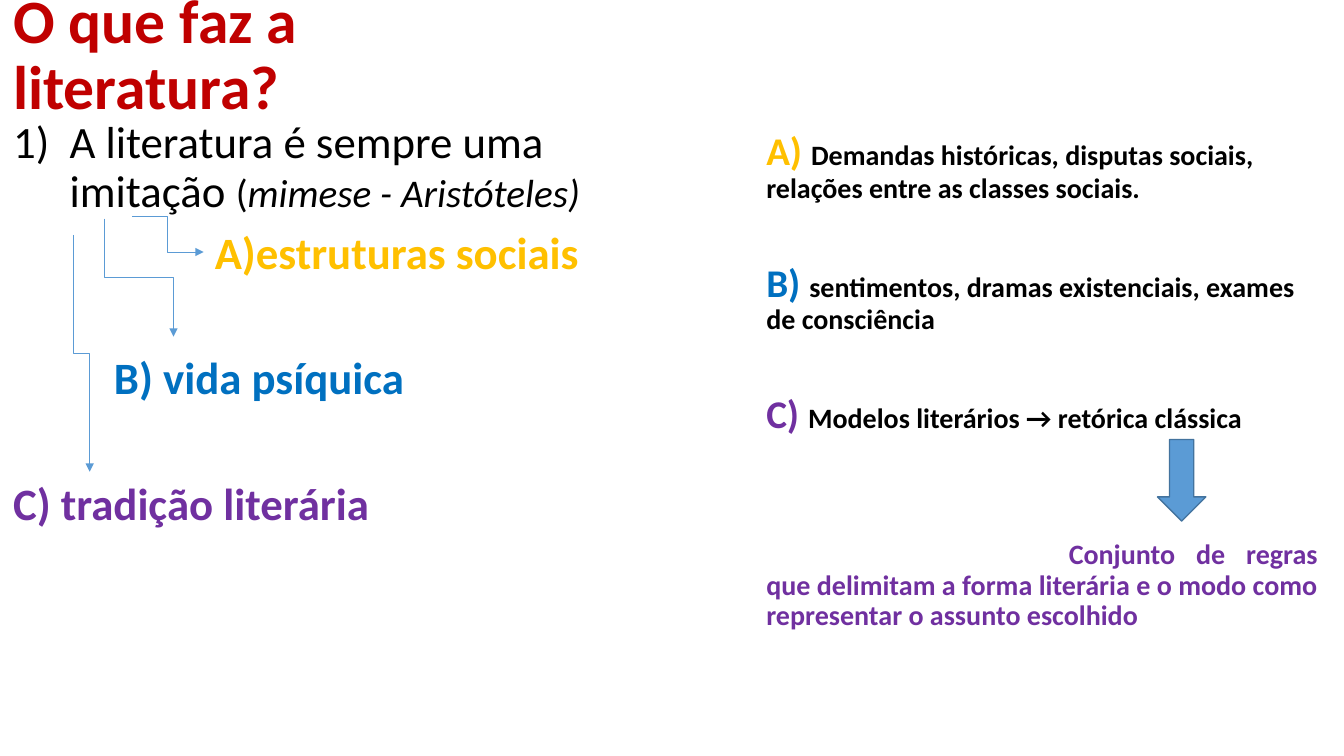
from pptx import Presentation
from pptx.dml.color import RGBColor
from pptx.enum.shapes import MSO_CONNECTOR, MSO_SHAPE
from pptx.enum.text import MSO_ANCHOR, MSO_AUTO_SIZE, PP_ALIGN
from pptx.oxml.ns import qn
from pptx.util import Inches, Pt
from lxml.etree import SubElement

RED = RGBColor(0xC0, 0x00, 0x00)
BLACK = RGBColor(0x00, 0x00, 0x00)
GOLD = RGBColor(0xFF, 0xC0, 0x00)
BLUE = RGBColor(0x00, 0x70, 0xC0)
PURPLE = RGBColor(0x70, 0x30, 0xA0)
SKY = RGBColor(0x5B, 0x9B, 0xD5)
EDGE = RGBColor(0x43, 0x73, 0x9E)

TAB = Inches(1)
HANG = Inches(0.56)
GAP = 10


def place(box, left, top, width, height):
    box.left, box.top = Inches(left), Inches(top)
    box.width, box.height = Inches(width), Inches(height)
    box.text_frame.word_wrap = True
    box.text_frame.auto_size = MSO_AUTO_SIZE.NONE


def write(par, runs, before=GAP, left=0, first=0, number=False):
    """Fill a paragraph with (text, size, colour, bold, italic) runs."""
    par.line_spacing = 0.9
    par.space_before = Pt(before)
    par.alignment = PP_ALIGN.LEFT
    props = par._p.get_or_add_pPr()
    props.set("marL", str(left))
    props.set("indent", str(first))
    if number:
        SubElement(props, qn("a:buFont"), typeface="+mj-lt")
        SubElement(props, qn("a:buAutoNum"), type="arabicParenR")
    else:
        SubElement(props, qn("a:buNone"))
    for text, size, color, bold, italic in runs:
        run = par.add_run()
        run.text = text
        font = run.font
        font.name, font.size = "Calibri", Pt(size)
        font.bold, font.italic = bold, italic
        font.color.rgb = color


deck = Presentation()
deck.slide_width, deck.slide_height = Inches(13.33), Inches(7.5)
slide = deck.slides.add_slide(deck.slide_layouts[3])
title, topics, notes = slide.placeholders

# Title
place(title, 0.03, 0, 5.68, 1.12)
title.text_frame.vertical_anchor = MSO_ANCHOR.MIDDLE
write(title.text_frame.paragraphs[0],
      [("O que faz a literatura?", 44, RED, True, False)], before=0)

# Left column: the thesis and its three objects
place(topics, 0.03, 1.14, 6.09, 6.2)
frame = topics.text_frame
write(frame.paragraphs[0], [
    ("A literatura é sempre uma imitação ", 32, BLACK, False, False),
    ("(", 28, BLACK, False, False),
    ("mimese - Aristóteles)", 28, BLACK, False, True),
], left=HANG, first=-HANG, number=True)
for text, color, tabs, before in [
    ("A)estruturas sociais", GOLD, 2, GAP),
    ("B) vida psíquica", BLUE, 1, 55),
    ("C) tradição literária", PURPLE, 0, 55),
]:
    write(frame.add_paragraph(), [(text, 32, color, True, False)],
          before, left=tabs * TAB)

# Right column: what each object covers
place(notes, 7.5, 1.26, 5.67, 5.24)
frame = notes.text_frame
par = frame.paragraphs[0]
for mark, text, color, before in [
    ("A) ", "Demandas históricas, disputas sociais, relações entre as classes sociais.", GOLD, GAP),
    ("B) ", "sentimentos, dramas existenciais, exames de consciência", BLUE, 42),
    ("C) ", "Modelos literários → retórica clássica", PURPLE, 42),
]:
    write(par, [(mark, 28, color, True, False), (text, 20, BLACK, True, False)], before)
    par = frame.add_paragraph()
write(par, [("Conjunto de regras que delimitam a forma literária e o modo como "
             "representar o assunto escolhido", 20, PURPLE, True, False)],
      before=74, first=3 * TAB)
par.alignment = PP_ALIGN.JUSTIFY

# Elbow arrows; an upright one is a level one turned about its centre
for x1, y1, x2, y2, upright in [
    (1.31, 2.15, 2.02, 2.5, False),
    (1.03, 2.17, 1.72, 3.34, True),
    (0.73, 2.33, 0.89, 4.68, True),
]:
    ends = x1, y1, x2, y2
    if upright:
        midx, midy = (x1 + x2) / 2, (y1 + y2) / 2
        dx, dy = (x2 - x1) / 2, (y2 - y1) / 2
        ends = midx + dy, midy - dx, midx - dy, midy + dx
    link = slide.shapes.add_connector(MSO_CONNECTOR.ELBOW, *map(Inches, ends))
    if upright:
        link._element.spPr.find(qn("a:xfrm")).set("rot", str(270 * 60000))
    link.line.color.rgb = SKY
    link.line.width = Pt(0.5)
    SubElement(link.line._get_or_add_ln(), qn("a:tailEnd"), type="triangle")
    SubElement(link._element.spPr, qn("a:effectLst"))

# Block arrow from the models to the rules
arrow = slide.shapes.add_shape(MSO_SHAPE.DOWN_ARROW, Inches(11.48), Inches(4.36),
                               Inches(0.48), Inches(0.81))
arrow.shadow.inherit = False
arrow.fill.solid()
arrow.fill.fore_color.rgb = SKY
arrow.line.color.rgb = EDGE
arrow.line.width = Pt(1)

deck.save("out.pptx")
